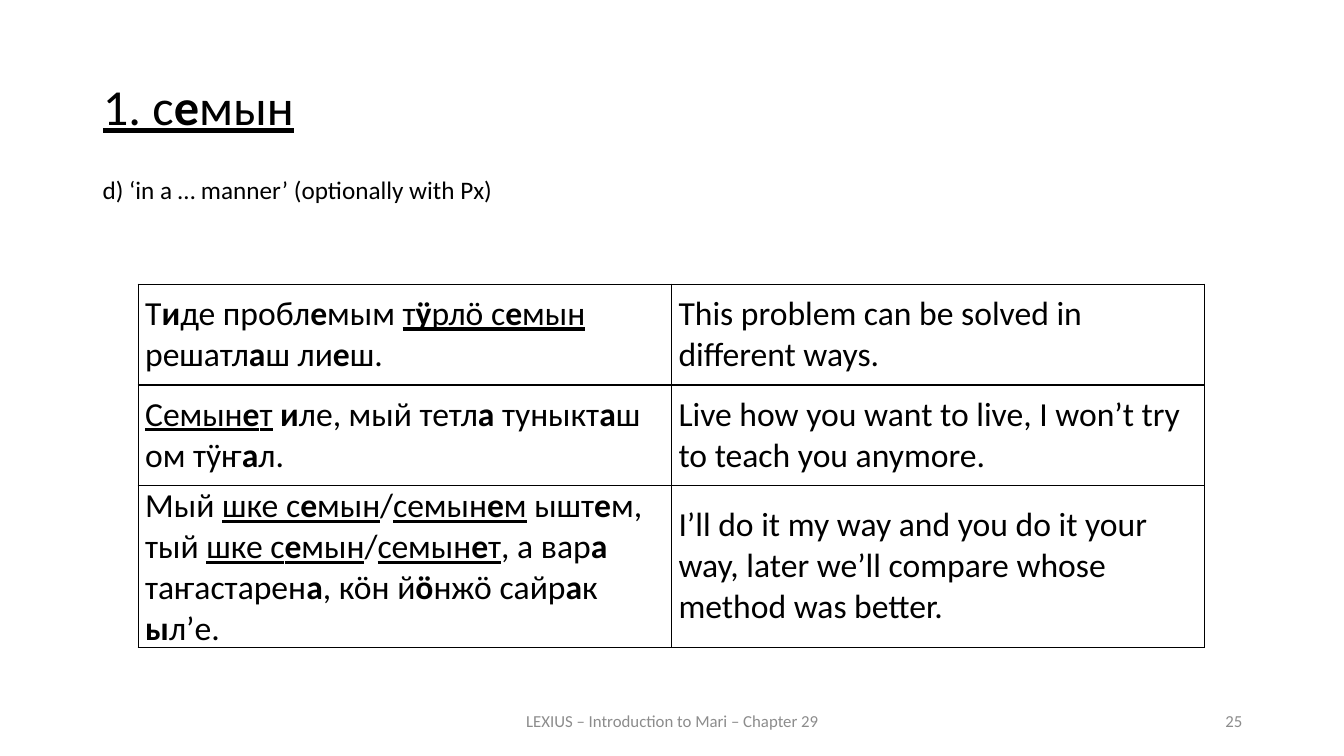
"""Build a grammar slide on the Mari postposition семын with translated examples."""
from dataclasses import dataclass
from typing import NamedTuple

from lxml.etree import SubElement
from pptx import Presentation
from pptx.dml.color import RGBColor
from pptx.enum.text import MSO_ANCHOR, MSO_AUTO_SIZE, PP_ALIGN
from pptx.oxml import parse_xml
from pptx.oxml.ns import nsdecls, qn
from pptx.slide import Slide
from pptx.table import _Cell
from pptx.text.text import TextFrame
from pptx.util import Emu, Pt

EMU_PER_PX = 9144


@dataclass(frozen=True)
class Theme:
    """Colours, font and type sizes of the slide."""
    font: str = "Calibri"
    ink: str = "000000"
    muted: str = "8C8C8C"
    title: int = 36
    example: int = 24
    meaning: int = 18
    footer: int = 12
    border: int = 1


class Box(NamedTuple):
    """A position and size in px."""
    left: int
    top: int
    width: int
    height: int


class Label(NamedTuple):
    """A line of free text with its place and format."""
    text: str
    box: Box
    size: int
    color: str
    align: PP_ALIGN
    anchor: MSO_ANCHOR


class Example(NamedTuple):
    """A Mari sentence, its translation and its row height in px."""
    mari: str
    english: str
    height: int


THEME = Theme()
TITLE_BOX = Box(92, 76, 1150, 83)
EXAMPLES_BOX = Box(137, 282, 1058, 359)
TITLE = "_1. с*е*мын_"
LABELS = [
    Label("d) ‘in a … manner’ (optionally with Px)", Box(92, 168, 517, 40),
          THEME.meaning, THEME.ink, PP_ALIGN.LEFT, MSO_ANCHOR.TOP),
    Label("LEXIUS – Introduction to Mari – Chapter 29", Box(442, 695, 450, 40),
          THEME.footer, THEME.muted, PP_ALIGN.CENTER, MSO_ANCHOR.MIDDLE),
    Label("25", Box(942, 695, 300, 40),
          THEME.footer, THEME.muted, PP_ALIGN.RIGHT, MSO_ANCHOR.MIDDLE),
]
EXAMPLES = [
    Example("Т*и*де пробл*е*мым _т*ӱ*рлӧ с*е*мын_ решатл*а*ш ли*е*ш.",
            "This problem can be solved in different ways.", 100),
    Example("_Семын*е*т_ *и*ле, мый тетл*а* туныкт*а*ш ом тӱҥ*а*л.",
            "Live how you want to live, I won’t try to teach you anymore.", 100),
    Example("Мый _шке с*е*мын_/_семын*е*м_ ышт*е*м, тый _шке с*е*мын_/_семын*е*т_, "
            "а вар*а* таҥастарен*а*, кӧн й*ӧ*нжӧ сайр*а*к *ы*л’е.",
            "I’ll do it my way and you do it your way, "
            "later we’ll compare whose method was better.", 159),
]


def px(length: int) -> Emu:
    """Convert px to EMU."""
    return Emu(length * EMU_PER_PX)


def write(frame: TextFrame, text: str, *, size: int, color: str = THEME.ink,
          align: PP_ALIGN = PP_ALIGN.LEFT, line_spacing: float = 1.0) -> None:
    """Write text in which *stars* mark stress and _underscores_ mark underlining."""
    paragraph = frame.paragraphs[0]
    paragraph.alignment = align
    paragraph.line_spacing = line_spacing
    for span_index, span in enumerate(text.split("_")):
        for piece_index, piece in enumerate(span.split("*")):
            if not piece:
                continue
            run = paragraph.add_run()
            run.text = piece
            run.font.name = THEME.font
            run.font.size = Pt(size)
            run.font.color.rgb = RGBColor.from_string(color)
            run.font.bold = piece_index % 2 == 1
            run.font.underline = span_index % 2 == 1


def add_title(slide: Slide) -> None:
    """Place and fill the title placeholder."""
    title = slide.shapes.title
    title.left, title.top, title.width, title.height = map(px, TITLE_BOX)
    frame = title.text_frame
    frame.auto_size = MSO_AUTO_SIZE.NONE
    frame.vertical_anchor = MSO_ANCHOR.TOP
    write(frame, TITLE, size=THEME.title, align=PP_ALIGN.JUSTIFY, line_spacing=0.9)


def add_label(slide: Slide, label: Label) -> None:
    """Add one line of free text."""
    frame = slide.shapes.add_textbox(*map(px, label.box)).text_frame
    frame.word_wrap = True
    frame.vertical_anchor = label.anchor
    write(frame, label.text, size=label.size, color=label.color, align=label.align)


def outline_cell(cell: _Cell) -> None:
    """Clear the cell's fill and rule all four sides."""
    cell.fill.background()
    properties = cell._tc.get_or_add_tcPr()
    for position, side in enumerate(("lnL", "lnR", "lnT", "lnB")):
        border = parse_xml(f'<a:{side} {nsdecls("a")} w="{Pt(THEME.border)}"/>')
        fill = SubElement(border, qn("a:solidFill"))
        SubElement(fill, qn("a:srgbClr"), val=THEME.ink)
        properties.insert(position, border)


def add_examples(slide: Slide) -> None:
    """Add the table of sentences and translations."""
    table = slide.shapes.add_table(len(EXAMPLES), 2, *map(px, EXAMPLES_BOX)).table
    table.first_row = table.horz_banding = False
    for row, example in zip(table.rows, EXAMPLES):
        row.height = px(example.height)
        for cell, sentence in zip(row.cells, (example.mari, example.english)):
            cell.margin_left = cell.margin_right = px(7)
            cell.margin_top = cell.margin_bottom = 0
            cell.vertical_anchor = MSO_ANCHOR.MIDDLE
            outline_cell(cell)
            write(cell.text_frame, sentence, size=THEME.example)


def main() -> None:
    """Build and save the slide."""
    presentation = Presentation()
    presentation.slide_width, presentation.slide_height = px(1333), px(750)
    title_only = presentation.slide_layouts.get_by_name("Title Only")
    slide = presentation.slides.add_slide(title_only)
    add_title(slide)
    for label in LABELS:
        add_label(slide, label)
    add_examples(slide)
    presentation.save("out.pptx")


if __name__ == "__main__":
    main()
